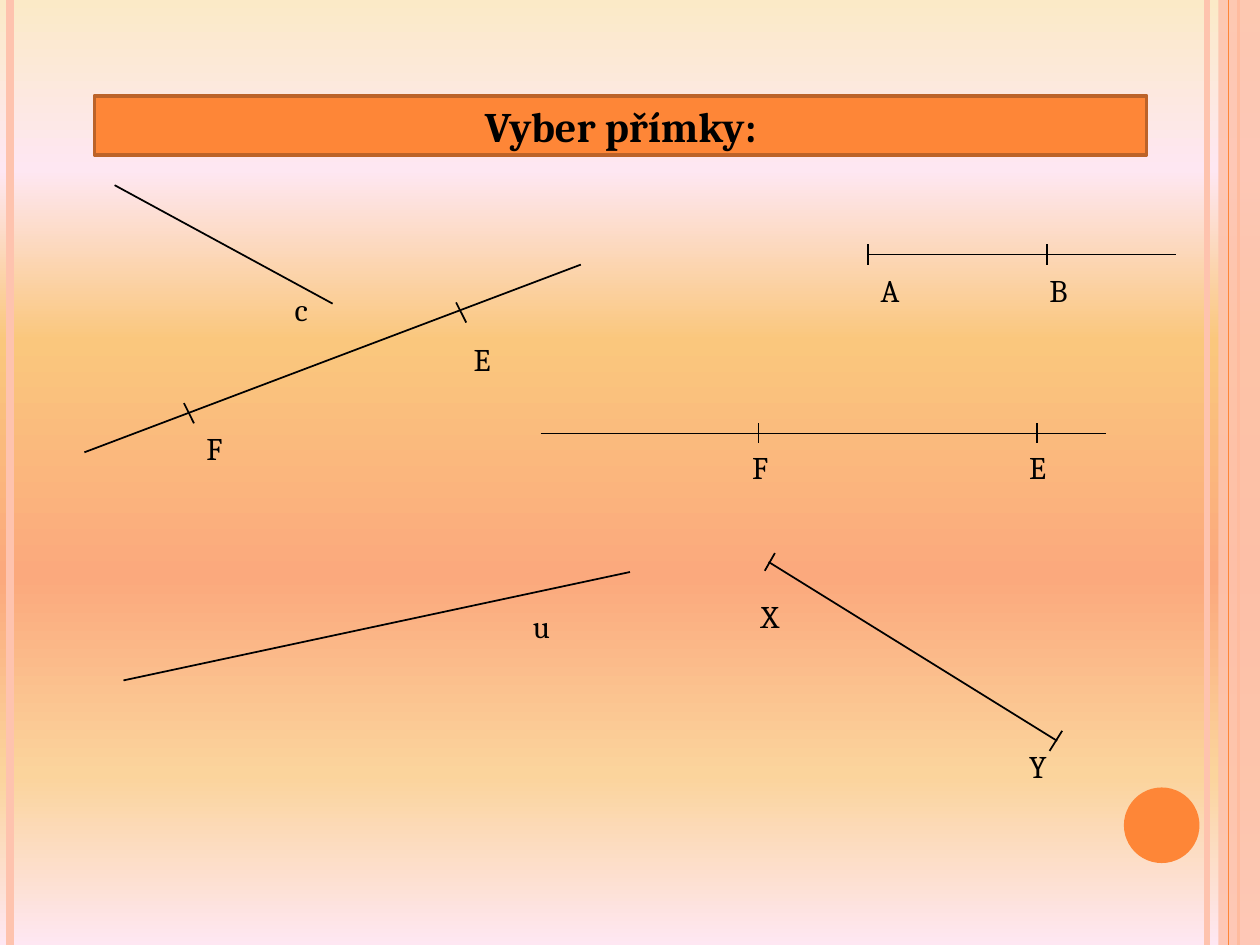
from lxml.etree import SubElement
from pptx import Presentation
from pptx.dml.color import RGBColor
from pptx.enum.shapes import MSO_CONNECTOR, MSO_SHAPE
from pptx.enum.text import MSO_ANCHOR, MSO_AUTO_SIZE, PP_ALIGN
from pptx.oxml.ns import qn
from pptx.util import Inches, Pt

ORANGE = RGBColor(0xFE, 0x86, 0x37)
BROWN = RGBColor(0xBC, 0x63, 0x29)
PEACH = RGBColor(0xFE, 0xC3, 0xAE)
BLACK = RGBColor(0, 0, 0)
SKY = [(0, "FBEAC7"), (18, "FEE7F2"), (36, "FAC77D"),
       (61, "FBA97D"), (82, "FBD49C"), (100, "FEE7F2")]


def write(frame, text, size=18, bold=False, align=PP_ALIGN.LEFT, anchor=MSO_ANCHOR.TOP):
    frame.word_wrap = True
    frame.auto_size = MSO_AUTO_SIZE.NONE
    frame.vertical_anchor = anchor
    paragraph = frame.paragraphs[0]
    paragraph.alignment = align
    run = paragraph.add_run()
    run.text = text
    run.font.name = "Cambria"
    run.font.size = Pt(size)
    run.font.bold = bold
    run.font.color.rgb = BLACK


def draw_line(x1, y1, x2, y2, color=BLACK, width=1):
    line = slide.shapes.add_connector(
        MSO_CONNECTOR.STRAIGHT, Inches(x1), Inches(y1), Inches(x2), Inches(y2))
    line.line.color.rgb = color
    line.line.width = Pt(width)
    SubElement(line.element.spPr, qn("a:effectLst"))


prs = Presentation()
prs.slide_width, prs.slide_height = Inches(10), Inches(7.5)
slide = prs.slides.add_slide(prs.slide_layouts[5])

# Background gradient, running from top to bottom
background = slide.background.fill
background.gradient()
background.gradient_angle = 270
stops = slide.element.find(".//" + qn("a:gsLst"))
for old_stop in list(stops):
    stops.remove(old_stop)
for percent, color in SKY:
    stop = SubElement(stops, qn("a:gs"), pos=str(percent * 1000))
    SubElement(stop, qn("a:srgbClr"), val=color)

# Side stripes and circle
for x, color, width in [(9.58, PEACH, 3), (0.08, PEACH, 4.5), (9.83, ORANGE, 1.5)]:
    draw_line(x, 0, x, 7.5, color, width)

band = slide.shapes.add_shape(
    MSO_SHAPE.RECTANGLE, Inches(9.67), Inches(0), Inches(0.33), Inches(7.5))
circle = slide.shapes.add_shape(
    MSO_SHAPE.OVAL, Inches(8.92), Inches(6.25), Inches(0.6), Inches(0.6))
for ornament, color in [(band, PEACH), (circle, ORANGE)]:
    ornament.shadow.inherit = False
    ornament.fill.solid()
    ornament.fill.fore_color.rgb = color
    ornament.line.fill.background()
band_color = band.element.spPr.find(".//" + qn("a:srgbClr"))
SubElement(band_color, qn("a:alpha"), val="87000")
draw_line(9.83 - 0.08, 0, 9.83 - 0.08, 7.5, PEACH, 0.75)
draw_line(9.75, 0, 9.75, 7.5, ORANGE, 0.75)

# Title bar
title = slide.shapes.title
title.left, title.top = Inches(0.75), Inches(0.76)
title.width, title.height = Inches(8.35), Inches(0.47)
title.fill.solid()
title.fill.fore_color.rgb = ORANGE
title.line.color.rgb = BROWN
title.line.width = Pt(2)
write(title.text_frame, "Vyber přímky:", size=24, bold=True,
      align=PP_ALIGN.CENTER, anchor=MSO_ANCHOR.MIDDLE)

# Lines, rays and segments
for ends in [
    (0.91, 1.47, 2.64, 2.41),  # c
    (0.67, 3.59, 4.61, 2.1),   # slanted FE
    (4.29, 3.44, 8.78, 3.44),  # level FE
    (6.89, 2.02, 9.33, 2.02),  # AB
    (0.98, 5.4, 5, 4.54),      # u
    (6.1, 4.46, 8.39, 5.88),   # XY
]:
    draw_line(*ends)

# Tick marks: centre and half extents
for x, y, dx, dy in [
    (1.5, 3.28, 0.04, 0.08), (3.66, 2.48, 0.04, 0.08),
    (6.02, 3.44, 0, 0.08), (8.23, 3.44, 0, 0.08),
    (6.89, 2.02, 0, 0.08), (8.31, 2.02, 0, 0.08),
    (6.11, 4.46, -0.04, 0.07), (8.38, 5.88, -0.05, 0.08),
]:
    draw_line(x - dx, y - dy, x + dx, y + dy)

# Letters
for letter, x, y in [
    ("c", 2.24, 2.25), ("E", 3.66, 2.65), ("F", 1.54, 3.36),
    ("F", 5.87, 3.51), ("E", 8.07, 3.51), ("A", 6.89, 2.1), ("B", 8.23, 2.1),
    ("u", 4.13, 4.77), ("X", 5.94, 4.69), ("Y", 8.07, 5.88),
]:
    label = slide.shapes.add_textbox(Inches(x), Inches(y), Inches(0.35), Inches(0.4))
    write(label.text_frame, letter)

prs.save("out.pptx")
